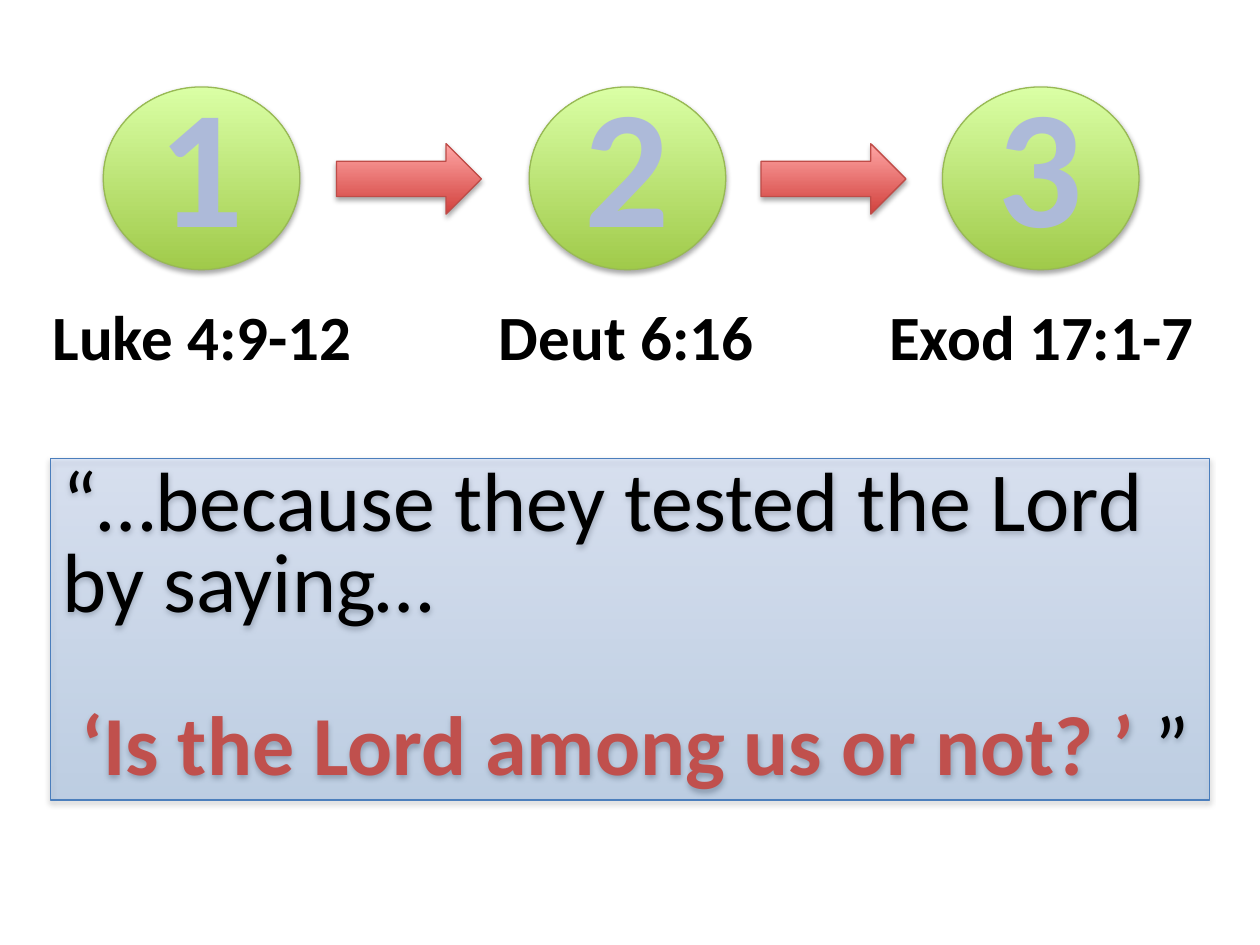
import pptx
import pptx.util
import pptx.dml.color
import pptx.enum.shapes
import pptx.enum.text
import pptx.oxml.ns
import lxml.etree

Inches = pptx.util.Inches
Pt = pptx.util.Pt
SHAPE = pptx.enum.shapes.MSO_SHAPE
ALIGN = pptx.enum.text.PP_ALIGN
qn = pptx.oxml.ns.qn


def rgb(value):
    return pptx.dml.color.RGBColor.from_string(value)


def add_glossy(kind, left, top, width, height, bottom, upper, outline, opacity=100):
    shape = slide.shapes.add_shape(kind, Inches(left), Inches(top), Inches(width), Inches(height))
    shape.fill.gradient()
    shape.fill.gradient_angle = 90
    for stop, color, position in zip(shape.fill.gradient_stops, (bottom, upper), (0, 1)):
        stop.color.rgb = rgb(color)
        stop.position = position
    properties = shape._element.spPr
    for color in properties.find(qn("a:gradFill")).iter(qn("a:srgbClr")):
        lxml.etree.SubElement(color, qn("a:alpha"), val=str(opacity * 1000))
    shape.line.color.rgb = rgb(outline)
    shape.line.width = Pt(0.75)
    shape.shadow.inherit = False
    shadow = lxml.etree.SubElement(
        properties.find(qn("a:effectLst")), qn("a:outerShdw"),
        blurRad=str(Pt(3.1)), dist=str(Pt(1.8)), dir="5400000", rotWithShape="0")
    shadow_color = lxml.etree.SubElement(shadow, qn("a:srgbClr"), val="000000")
    lxml.etree.SubElement(shadow_color, qn("a:alpha"), val="35000")
    return shape


def format_run(run, size, color, bold):
    run.font.name = "Calibri"
    run.font.size = Pt(size)
    run.font.bold = bold
    run.font.color.rgb = rgb(color)


presentation = pptx.Presentation()
presentation.slide_width = Inches(10)
presentation.slide_height = Inches(7.5)
slide = presentation.slides.add_slide(presentation.slide_layouts[6])

steps = [
    ("1", 0.82, "Luke 4:9-12", 0.3, 2.61),
    ("2", 4.2, "Deut 6:16", 3.85, 2.24),
    ("3", 7.48, "Exod 17:1-7", 6.94, 2.65),
]
for number, circle_left, passage, passage_left, passage_width in steps:
    add_glossy(SHAPE.OVAL, circle_left, 0.69, 1.56, 1.45, "A0CA4A", "DAFFA5", "98B955")
    for text, left, top, width, height, size, color, align in (
        (number, circle_left + 0.34, 0.42, 0.88, 1.72, 96, "ADBAD9", ALIGN.LEFT),
        (passage, passage_left, 2.31, passage_width, 0.71, 36, "000000", ALIGN.CENTER),
    ):
        label = slide.shapes.add_textbox(Inches(left), Inches(top), Inches(width), Inches(height))
        label.text_frame.word_wrap = False
        label.text_frame.text = text
        paragraph = label.text_frame.paragraphs[0]
        paragraph.alignment = align
        format_run(paragraph.runs[0], size, color, True)

for arrow_left in (2.67, 6.04):
    add_glossy(SHAPE.RIGHT_ARROW, arrow_left, 1.14, 1.15, 0.56, "D1403C", "FFA6A5", "BF4C48")

quotation = add_glossy(SHAPE.RECTANGLE, 0.4, 3.64, 9.2, 2.71, "3F80CE", "A4C4FF", "4B7EBC", 25)
frame = quotation.text_frame
frame.word_wrap = True
frame.vertical_anchor = pptx.enum.text.MSO_ANCHOR.MIDDLE
frame.text = "“…because they tested the Lord by saying…"
reason = frame.paragraphs[0]
format_run(reason.runs[0], 48, "000000", False)

question = frame.add_paragraph()
question.space_before = Pt(47)
question._p.get_or_add_pPr().set("marL", str(Inches(0.15)))
for text, color, bold in (
    ("‘Is the Lord among us or not? ’", "C0504D", True),
    (" ”", "000000", False),
):
    run = question.add_run()
    run.text = text
    format_run(run, 48, color, bold)

for paragraph in (reason, question):
    paragraph.alignment = ALIGN.LEFT
    paragraph.line_spacing = 0.8

presentation.save("out.pptx")
